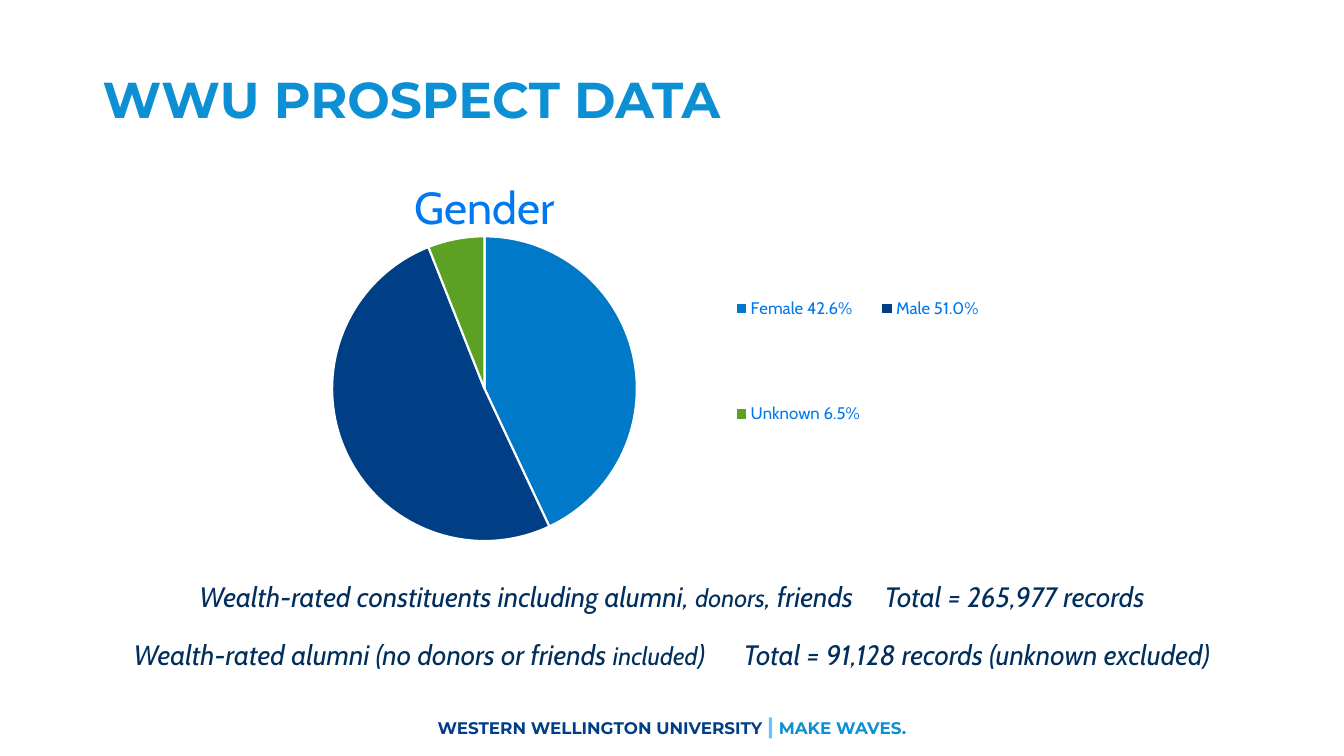
from lxml import etree
from pptx import Presentation
from pptx import util as u
from pptx.chart.data import CategoryChartData
from pptx.dml.color import RGBColor
from pptx.enum import chart as ch, text
from pptx.oxml.ns import qn

NAVY = RGBColor(0x00, 0x2F, 0x5E)
ROYAL = RGBColor(0x00, 0x3F, 0x87)
SKY = RGBColor(0x0C, 0x8F, 0xD3)
PALE = RGBColor(0x63, 0xC2, 0xFF)
AZURE = RGBColor(0x00, 0x78, 0xF0)
WHITE = RGBColor(0xFF, 0xFF, 0xFF)
SLICES = [
    ("Female 42.6%", 43, RGBColor(0x00, 0x79, 0xC8)),
    ("Male 51.0%", 51, RGBColor(0x00, 0x3E, 0x86)),
    ("Unknown 6.5%", 6, RGBColor(0x5D, 0xA1, 0x24)),
]
WIDE = 33.87


def style(font, face, size, color):
    font.name, font.size, font.color.rgb = face, u.Pt(size), color


def add_line(slide, box, runs, face, align=text.PP_ALIGN.CENTER):
    """Add a one-paragraph text box; each run is (words, size, color)."""
    frame = slide.shapes.add_textbox(*map(u.Cm, box)).text_frame
    frame.word_wrap = True
    frame.vertical_anchor = text.MSO_ANCHOR.MIDDLE
    para = frame.paragraphs[0]
    para.alignment = align
    para.font.name = face
    for words, size, color in runs:
        run = para.add_run()
        run.text = words
        run.font.size = u.Pt(size)
        run.font.color.rgb = color
    return para


def add_note(slide, top, head, small, tail, total, gap):
    """Add a note whose total stands gap points after the tail."""
    sizes = [(head, 20), (small, 18), (tail, 20), (" ", 20), (total, 20)]
    runs = [(words, size, NAVY) for words, size in sizes]
    para = add_line(slide, (0, top, WIDE, 1.11), runs, "Cabin")
    para.font.italic = True
    para.runs[3]._r.get_or_add_rPr().set("spc", str(gap * 100))


def place(part, **spots):
    """Give a chart part a manual layout, as fractions of the chart."""
    for old in part.findall(qn("c:layout")):
        part.remove(old)
    layout = etree.Element(qn("c:layout"))
    manual = etree.SubElement(layout, qn("c:manualLayout"))
    for key, val in spots.items():
        etree.SubElement(manual, qn(f"c:{key}")).set("val", str(val))
    over = part.find(qn("c:overlay"))
    if over is None:
        part.insert(0, layout)
    else:
        over.addprevious(layout)


def add_pie(slide):
    data = CategoryChartData()
    data.categories = [name for name, _, _ in SLICES]
    data.add_series("Series 1", [val for _, val, _ in SLICES])
    box = map(u.Cm, (0, 3.78, 33, 11.46))
    chart = slide.shapes.add_chart(ch.XL_CHART_TYPE.PIE, *box, data).chart
    style(chart.font, "Calibri", 10, NAVY)

    plot = chart.plots[0]
    plot.vary_by_categories = True
    for i, (_, _, color) in enumerate(SLICES):
        form = plot.series[0].points[i].format
        form.fill.solid()
        form.fill.fore_color.rgb = color
        form.line.color.rgb = WHITE
        form.line.width = u.Pt(1.5)

    chart.has_title = True
    title = chart.chart_title
    title.text_frame.text = "Gender"
    font = title.text_frame.paragraphs[0].font
    style(font, "Cabin", 32, AZURE)
    font.bold = False

    chart.has_legend = True
    legend = chart.legend
    legend.position = ch.XL_LEGEND_POSITION.RIGHT
    legend.include_in_layout = False
    style(legend.font, "Cabin", 12, AZURE)

    edge = {"xMode": "edge", "yMode": "edge"}
    place(title._element, **edge, x=0.31, y=0.04)
    place(legend._element, **edge, x=0.55, y=0.14, w=0.21, h=0.65)
    place(chart._chartSpace.chart.plotArea, layoutTarget="inner", **edge,
          x=0.25, y=0.19, w=0.24, h=0.67)


def main():
    deck = Presentation()
    deck.slide_width, deck.slide_height = u.Cm(WIDE), u.Cm(19.05)
    slide = deck.slides.add_slide(deck.slide_layouts[6])

    add_pie(slide)
    add_note(slide, 14.48, "Wealth-rated constituents including alumni, ",
             "donors", ", friends", "Total = 265,977 records", 18)
    add_note(slide, 15.92, "Wealth-rated alumni (no donors or friends ",
             "included", ")", "Total = 91,128 records (unknown excluded)", 23)

    title = add_line(slide, (2.34, 0.74, 29.21, 3.68),
                     [("WWU PROSPECT DATA", 36, SKY)],
                     "Montserrat", text.PP_ALIGN.LEFT)
    title.line_spacing = 0.9
    title.font.bold = True

    foot = add_line(slide, (0, 17.78, WIDE, 1.02), [
        ("WESTERN WELLINGTON UNIVERSITY ", 12, ROYAL),
        ("|", 16, PALE),
        (" MAKE WAVES.", 12, SKY),
    ], "Montserrat")
    foot.font.bold = True

    deck.save("out.pptx")


if __name__ == "__main__":
    main()
